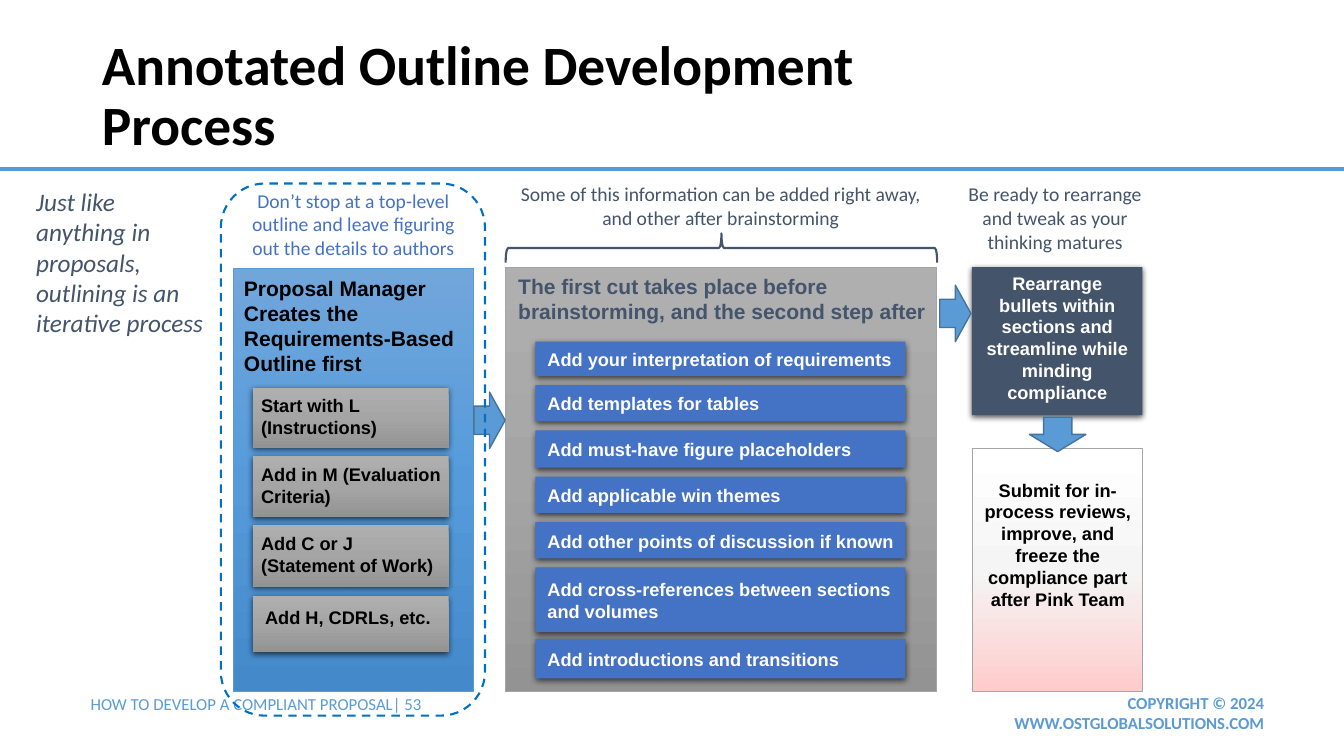
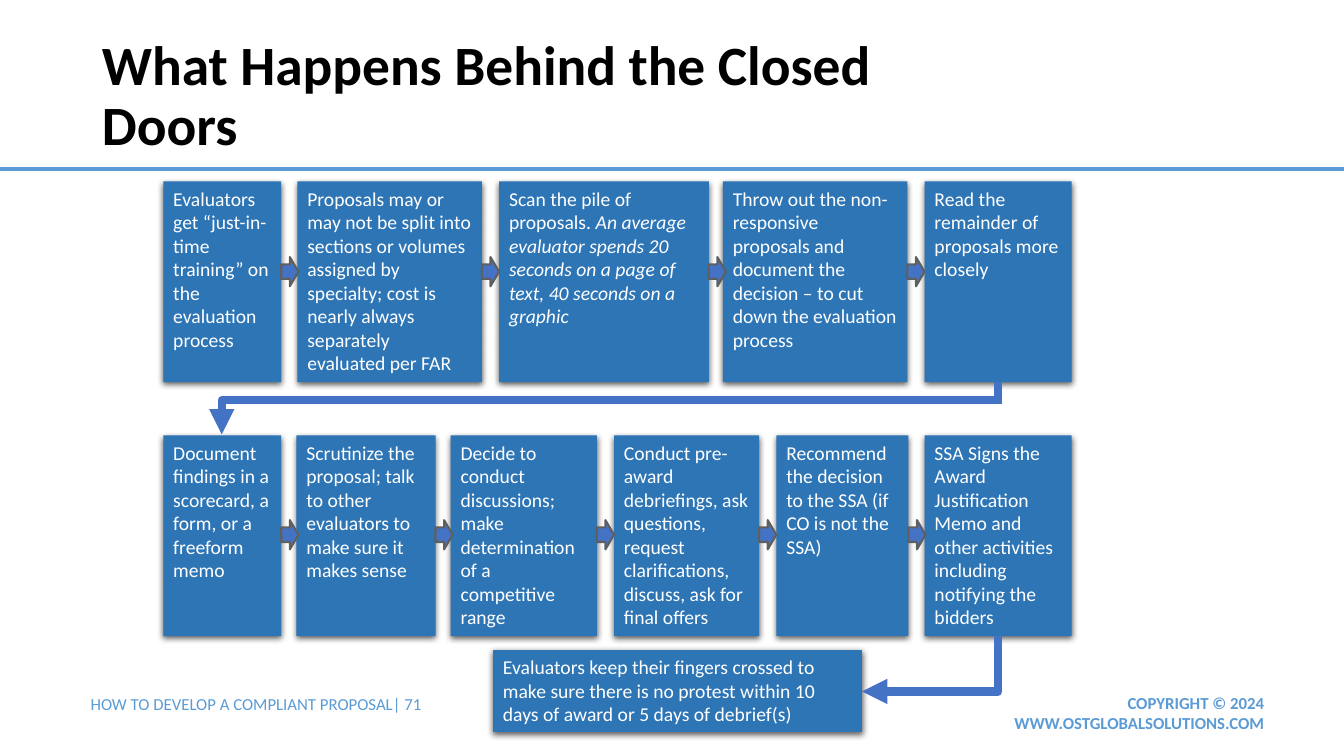
from lxml import etree
from pptx import Presentation
from pptx.dml.color import RGBColor
from pptx.enum import dml, shapes, text
from pptx.oxml.ns import qn
from pptx.util import Inches, Pt

BLACK = RGBColor(0x00, 0x00, 0x00)
WHITE = RGBColor(0xFF, 0xFF, 0xFF)
SKY = RGBColor(0x5B, 0x9B, 0xD5)
SKY_EDGE = RGBColor(0x43, 0x73, 0x9E)
ROYAL = RGBColor(0x44, 0x72, 0xC4)
STEP_BLUE = RGBColor(0x2E, 0x75, 0xB6)
DASH_BLUE = RGBColor(0x00, 0x70, 0xC0)
SLATE = RGBColor(0x44, 0x54, 0x6A)
GRAY = RGBColor(0xA5, 0xA5, 0xA5)
ARROW_EDGE = RGBColor(0x5F, 0x5F, 0x5F)
BLUE_FADE = (RGBColor(0x71, 0xA6, 0xDB), RGBColor(0x55, 0x9B, 0xDB), RGBColor(0x44, 0x8A, 0xCA))
GRAY_FADE = (RGBColor(0xAF, 0xAF, 0xAF), GRAY, RGBColor(0x93, 0x93, 0x93))
PINK_FADE = (WHITE, RGBColor(0xF5, 0xF5, 0xF5), RGBColor(0xFF, 0xCC, 0xCC))

RECTANGLE = shapes.MSO_SHAPE.RECTANGLE
RIGHT_ARROW = shapes.MSO_SHAPE.RIGHT_ARROW
STRAIGHT, ELBOW = shapes.MSO_CONNECTOR.STRAIGHT, shapes.MSO_CONNECTOR.ELBOW
TOP, MIDDLE = text.MSO_ANCHOR.TOP, text.MSO_ANCHOR.MIDDLE
LEFT, CENTER, RIGHT = text.PP_ALIGN.LEFT, text.PP_ALIGN.CENTER, text.PP_ALIGN.RIGHT


def add_element(parent, tag, **attributes):
    element = etree.SubElement(parent, qn(tag))
    for name, value in attributes.items():
        element.set(name, str(value))
    return element


def write(shape, *paragraphs, size=14, font="Calibri", color=WHITE, bold=False, italic=False,
          align=LEFT, anchor=TOP, insets=(0.1, 0.05, 0.1, 0.05), spacing=None):
    """Fill a shape; a paragraph is a string or a list of (text, italic) runs."""
    frame = shape.text_frame
    frame.word_wrap = True
    frame.auto_size = text.MSO_AUTO_SIZE.NONE
    frame.vertical_anchor = anchor
    (frame.margin_left, frame.margin_top,
     frame.margin_right, frame.margin_bottom) = map(Inches, insets)
    for index, content in enumerate(paragraphs):
        paragraph = frame.add_paragraph() if index else frame.paragraphs[0]
        paragraph.alignment = align
        paragraph.line_spacing = spacing
        for words, slanted in [(content, italic)] if isinstance(content, str) else content:
            run = paragraph.add_run()
            run.text = words
            run.font.name = font
            run.font.size = Pt(size)
            run.font.bold = bold
            run.font.italic = slanted
            run.font.color.rgb = color


def add_label(slide, box, *paragraphs, **style):
    write(slide.shapes.add_textbox(*map(Inches, box)), *paragraphs, **style)


def fade(shape, colors):
    """Vertical gradient with evenly spaced stops."""
    shape.fill.gradient()
    shape.fill.gradient_angle = 270
    stops = shape._element.spPr.find(".//" + qn("a:gsLst"))
    for stop in list(stops):
        stops.remove(stop)
    for index, color in enumerate(colors):
        stop = add_element(stops, "a:gs", pos=100000 * index // (len(colors) - 1))
        add_element(stop, "a:srgbClr", val=color)


def add_shadow(shape):
    effects = shape._element.spPr.find(qn("a:effectLst"))
    shadow = add_element(effects, "a:outerShdw", blurRad=Pt(4.5), dist=Pt(1.5),
                         dir=5400000, algn="ctr", rotWithShape=0)
    color = add_element(shadow, "a:srgbClr", val=BLACK)
    add_element(color, "a:alpha", val=63000)


def add_box(slide, kind, box, fill=None, line=None, width=0.5, shadow=False):
    """Preset shape; fill is a colour, a tuple of gradient colours or None."""
    shape = slide.shapes.add_shape(kind, *map(Inches, box))
    shape.shadow.inherit = False
    if fill is None:
        shape.fill.background()
    elif fill in (BLUE_FADE, GRAY_FADE, PINK_FADE):
        fade(shape, fill)
    else:
        shape.fill.solid()
        shape.fill.fore_color.rgb = fill
    if line is None:
        shape.line.fill.background()
    else:
        shape.line.color.rgb = line
        shape.line.width = Pt(width)
    if shadow:
        add_shadow(shape)
    return shape


def add_line(slide, kind, begin, end, color, width):
    connector = slide.shapes.add_connector(kind, *map(Inches, (*begin, *end)))
    connector.line.color.rgb = color
    connector.line.width = Pt(width)
    add_element(connector._element.spPr, "a:effectLst")
    return connector


def add_corner_arrow(slide, begin, end, arrowhead):
    """One-bend connector, horizontal first; arrowhead is a:headEnd or a:tailEnd."""
    properties = add_line(slide, ELBOW, begin, end, ROYAL, 6)._element.spPr
    properties.find(qn("a:prstGeom")).set("prst", "bentConnector2")
    add_element(properties.find(qn("a:ln")), arrowhead, type="triangle")


def start_slide(presentation, title, page):
    """Title-only slide with the shared rule, title style and footers."""
    slide = presentation.slides.add_slide(presentation.slide_layouts[5])
    add_line(slide, STRAIGHT, (0, 1.68), (13.33, 1.68), SKY, 3)
    add_label(slide, (9.91, 6.82, 2.73, 0.5), "COPYRIGHT © 2024 WWW.OSTGLOBALSOLUTIONS.COM",
              size=12, color=SKY, bold=True, align=RIGHT)
    add_label(slide, (0.8, 6.83, 4.82, 0.3), f"HOW TO DEVELOP A COMPLIANT PROPOSAL| {page}",
              size=12, color=SKY)
    holder = slide.shapes.title
    holder.left, holder.top, holder.width, holder.height = map(Inches, (0.91, 0.4, 7.89, 1.14))
    write(holder, title, size=39.6, color=BLACK, bold=True, anchor=MIDDLE, spacing=0.9)
    return slide


def requirements_panel(slide, left, top):
    panel = add_box(slide, RECTANGLE, (left, top, 2.39, 4.2), BLUE_FADE, SKY)
    write(panel, "Proposal Manager", "Creates the", "Requirements-Based Outline first",
          size=15, font="Arial", color=BLACK, bold=True, insets=(0.11, 0.07, 0, 0))
    steps = (
        (1.19, 0.59, 0.08, 0.06, ("Start with L", "(Instructions)")),
        (1.86, 0.61, 0.08, 0.08, ("Add in M (Evaluation", "Criteria)")),
        (2.55, 0.61, 0.08, 0.07, ("Add C or J", "(Statement of Work)")),
        (3.25, 0.56, 0.12, 0.11, ("Add H, CDRLs, etc.",)),
    )
    for offset, height, indent, inset, lines in steps:
        step = add_box(slide, RECTANGLE, (left + 0.2, top + offset, 1.94, height),
                       GRAY_FADE, shadow=True)
        write(step, *lines, size=13, font="Arial", color=BLACK, bold=True,
              insets=(indent, inset, 0, 0))


def first_cut_panel(slide, left, top):
    panel = add_box(slide, RECTANGLE, (left, top, 4.28, 4.21), GRAY_FADE, GRAY)
    write(panel, "The first cut takes place before brainstorming, and the second step after",
          size=15, font="Arial", color=SLATE, bold=True, insets=(0.13, 0.06, 0.07, 0))
    additions = (
        (0.74, 0.34, "Add your interpretation of requirements"),
        (1.17, 0.36, "Add templates for tables"),
        (1.62, 0.37, "Add must-have figure placeholders"),
        (2.08, 0.36, "Add applicable win themes"),
        (2.53, 0.36, "Add other points of discussion if known"),
        (2.98, 0.64, "Add cross-references between sections and volumes"),
        (3.69, 0.39, "Add introductions and transitions"),
    )
    for offset, height, words in additions:
        bar = add_box(slide, RECTANGLE, (left + 0.3, top + offset, 3.67, height),
                      ROYAL, shadow=True)
        write(bar, words, size=13, font="Arial", bold=True, anchor=MIDDLE,
              insets=(0.12, 0.01, 0.03, 0))


def finishing_column(slide, left, top):
    rearrange = add_box(slide, RECTANGLE, (left, top, 1.69, 1.47), SLATE, shadow=True)
    write(rearrange, "Rearrange bullets within sections and streamline while minding compliance",
          size=13, font="Arial", bold=True, align=CENTER)
    submit = add_box(slide, RECTANGLE, (left, top + 1.8, 1.69, 2.41), PINK_FADE, GRAY)
    write(submit, "Submit for in-process reviews, improve, and freeze the compliance part "
          "after Pink Team", size=13, font="Arial", color=BLACK, bold=True, align=CENTER,
          insets=(0.08, 0.3, 0.07, 0))


def outline_slide(presentation):
    slide = start_slide(presentation, "Annotated Outline Development Process", "53")
    requirements_panel(slide, 2.31, 2.66)
    first_cut_panel(slide, 5.01, 2.65)
    finishing_column(slide, 9.64, 2.65)

    arrows = ((4.7, 3.89, 0.31, 0), (9.32, 2.83, 0.31, 0), (10.32, 4.03, 0.34, 90))
    for left, top, width, turn in arrows:
        arrow = add_box(slide, RIGHT_ARROW, (left, top, width, 0.56), SKY, SKY_EDGE, 1)
        arrow.rotation = turn
    brace = add_box(slide, shapes.MSO_SHAPE.LEFT_BRACE, (7.01, 0.32, 0.29, 4.28),
                    line=SLATE, width=1.5)
    brace.rotation = 90

    add_label(slide, (0.26, 1.8, 1.9, 1.62),
              "Just like anything in proposals, outlining is an iterative process",
              size=18, color=SLATE, italic=True)
    notes = (
        ((2.31, 1.82, 2.39, 0.81), ROYAL,
         "Don’t stop at a top-level outline and leave figuring out the details to authors"),
        ((4.96, 1.76, 4.38, 0.57), SLATE,
         "Some of this information can be added right away, and other after brainstorming"),
        ((9.41, 1.76, 2.11, 0.81), SLATE,
         "Be ready to rearrange and tweak as your thinking matures"),
    )
    for box, color, words in notes:
        add_label(slide, box, words, color=color, align=CENTER)
    frame = add_box(slide, shapes.MSO_SHAPE.ROUNDED_RECTANGLE, (2.19, 1.82, 2.62, 5.28),
                    line=DASH_BLUE, width=1.5)
    frame.line.dash_style = dml.MSO_LINE.DASH


def add_step(slide, box, content):
    write(add_box(slide, RECTANGLE, box, STEP_BLUE, shadow=True), content)


def step_row(slide, top, arrow_top, steps):
    """Row of (left, width, text) steps, with an arrow after each but the last."""
    for left, width, content in steps:
        add_step(slide, (left, top, width, 1.99), content)
    for left, width, _ in steps[:-1]:
        add_box(slide, RIGHT_ARROW, (left + width, arrow_top, 0.17, 0.29),
                ROYAL, ARROW_EDGE, 1.5)


def evaluation_slide(presentation):
    slide = start_slide(presentation, "What Happens Behind the Closed Doors", "71")
    step_row(slide, 1.8, 2.55, (
        (1.62, 1.17, "Evaluators get “just-in-time training” on the evaluation process"),
        (2.95, 1.83, "Proposals may or may not be split into sections or volumes assigned by "
                     "specialty; cost is nearly always separately evaluated per FAR"),
        (4.95, 2.08, [("Scan the pile of proposals. ", False),
                      ("An average evaluator spends 20 seconds on a page of text, "
                       "40 seconds on a graphic", True)]),
        (7.17, 1.83, "Throw out the non-responsive proposals and document the decision – "
                     "to cut down the evaluation process"),
        (9.17, 1.46, "Read the remainder of proposals more closely"),
    ))
    step_row(slide, 4.32, 5.16, (
        (1.62, 1.17, "Document findings in a scorecard, a form, or a freeform memo"),
        (2.94, 1.38, "Scrutinize the proposal; talk to other evaluators to make sure it "
                     "makes sense"),
        (4.47, 1.45, "Decide to conduct discussions; make determination of a competitive range"),
        (6.09, 1.44, "Conduct pre-award debriefings, ask questions, request clarifications, "
                     "discuss, ask for final offers"),
        (7.7, 1.31, "Recommend the decision to the SSA (if CO is not the SSA)"),
        (9.17, 1.46, "SSA Signs the Award Justification Memo and other activities including "
                     "notifying the bidders"),
    ))
    add_step(slide, (4.89, 6.45, 3.66, 0.81),
             "Evaluators keep their fingers crossed to make sure there is no protest within "
             "10 days of award or 5 days of debrief(s)")
    add_line(slide, STRAIGHT, (9.9, 3.79), (9.9, 4.01), ROYAL, 6)
    add_corner_arrow(slide, (9.9, 3.97), (2.2, 4.31), "a:tailEnd")
    add_corner_arrow(slide, (8.55, 6.86), (9.9, 6.31), "a:headEnd")


def main():
    presentation = Presentation()
    presentation.slide_width, presentation.slide_height = Inches(13.33), Inches(7.5)
    outline_slide(presentation)
    evaluation_slide(presentation)
    presentation.save("out.pptx")


if __name__ == "__main__":
    main()
